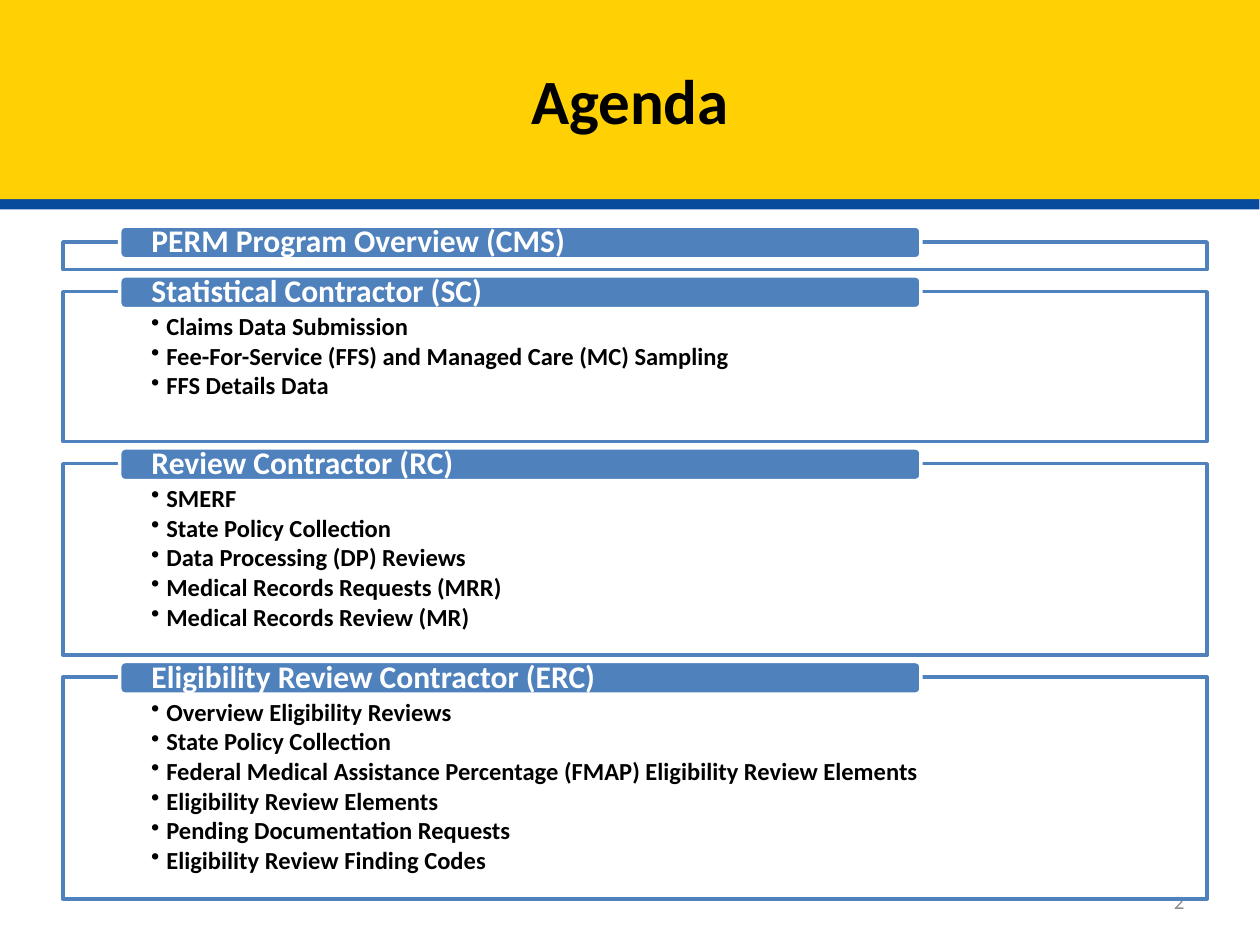
from dataclasses import dataclass

from lxml import etree
from pptx import Presentation
from pptx.dml.color import RGBColor
from pptx.enum.shapes import MSO_SHAPE
from pptx.enum.text import MSO_ANCHOR, PP_ALIGN
from pptx.oxml import parse_xml
from pptx.oxml.ns import nsdecls, qn
from pptx.util import Inches, Pt

RECTANGLE = MSO_SHAPE.RECTANGLE
ROUNDED = MSO_SHAPE.ROUNDED_RECTANGLE
TOP, MIDDLE = MSO_ANCHOR.TOP, MSO_ANCHOR.MIDDLE
LEFT, CENTER, RIGHT = PP_ALIGN.LEFT, PP_ALIGN.CENTER, PP_ALIGN.RIGHT

COLORS = {
    "banner": "FFD004",
    "edge": "084A9C",
    "section": "4F81BD",
    "paper": "FFFFFF",
    "ink": "000000",
    "page": "8C8C8C",
}
FONT = "Calibri"
CELL = Inches(0.1)
COLUMNS, ROWS = 100, 75
FIRST_PANEL_ROW = 19.2
PANEL_GAP = 1.75
PANEL_COLUMN, PANEL_COLUMNS = 5, 90.8
HEADING_COLUMN, HEADING_COLUMNS = 9.5, 63.6
HEADING_ROWS, HEADING_RISE = 2.6, 1.25


@dataclass(frozen=True)
class Section:
    heading: str
    rows: float
    topics: tuple[str, ...] = ()


SECTIONS = (
    Section("PERM Program Overview (CMS)", 2.2),
    Section("Statistical Contractor (SC)", 11.9, (
        "Claims Data Submission",
        "Fee-For-Service (FFS) and Managed Care (MC) Sampling",
        "FFS Details Data",
    )),
    Section("Review Contractor (RC)", 15.2, (
        "SMERF",
        "State Policy Collection",
        "Data Processing (DP) Reviews",
        "Medical Records Requests (MRR)",
        "Medical Records Review (MR)",
    )),
    Section("Eligibility Review Contractor (ERC)", 17.6, (
        "Overview Eligibility Reviews",
        "State Policy Collection",
        "Federal Medical Assistance Percentage (FMAP) Eligibility Review Elements",
        "Eligibility Review Elements",
        "Pending Documentation Requests",
        "Eligibility Review Finding Codes",
    )),
)


def grid(column: float, row: float, columns: float, rows: float) -> list[int]:
    """Turn grid positions into slide lengths."""
    return [round(cells * CELL) for cells in (column, row, columns, rows)]


def color(name: str) -> RGBColor:
    """Look up a named colour."""
    return RGBColor.from_string(COLORS[name])


def add_bullet(paragraph) -> None:
    """Give a paragraph a hanging bullet."""
    properties = paragraph._p.get_or_add_pPr()
    properties.set("marL", str(Inches(0.12)))
    properties.set("indent", str(-Inches(0.12)))
    etree.SubElement(properties, qn("a:buChar")).set("char", "•")


def write(shape, *lines: str, size: float, ink: str, bold: bool = True,
          align=LEFT, anchor=MIDDLE, margins=(0.1, 0.05, 0.1, 0.05),
          spacing: float = 1.0, after: float = 0, bullets: bool = False) -> None:
    """Write formatted paragraphs into a shape."""
    frame = shape.text_frame
    frame.word_wrap = True
    frame.vertical_anchor = anchor
    (frame.margin_left, frame.margin_top,
     frame.margin_right, frame.margin_bottom) = map(Inches, margins)
    for index, line in enumerate(lines):
        paragraph = frame.add_paragraph() if index else frame.paragraphs[0]
        paragraph.alignment = align
        paragraph.line_spacing = spacing
        paragraph.space_before = Pt(0)
        paragraph.space_after = Pt(after)
        if bullets:
            add_bullet(paragraph)
        run = paragraph.add_run()
        run.text = line
        run.font.name = FONT
        run.font.size = Pt(size)
        run.font.bold = bold
        run.font.color.rgb = color(ink)


def add_block(slide, kind, place: list[int], fill: str, line: str):
    """Add a filled and outlined shape without a shadow."""
    block = slide.shapes.add_shape(kind, *place)
    block.shadow.inherit = False
    block.fill.solid()
    block.fill.fore_color.rgb = color(fill)
    block.line.color.rgb = color(line)
    block.line.width = Pt(2)
    return block


def add_banner(slide) -> None:
    """Format the title as a banner with a hard blue shadow."""
    banner = slide.shapes.title
    banner.left, banner.top, banner.width, banner.height = grid(0, 0, COLUMNS, 15.8)
    banner.fill.solid()
    banner.fill.fore_color.rgb = color("banner")
    banner._element.spPr.append(parse_xml(
        f'<a:effectLst {nsdecls("a")}>'
        f'<a:outerShdw dist="{Pt(6)}" dir="5640000" algn="tl" rotWithShape="0">'
        f'<a:srgbClr val="{COLORS["edge"]}"/></a:outerShdw></a:effectLst>'))
    write(banner, "Agenda", size=36, ink="ink", align=CENTER)


def add_section(slide, section: Section, row: float) -> None:
    """Draw a section's panel, topics and heading."""
    panel = add_block(slide, RECTANGLE,
                      grid(PANEL_COLUMN, row, PANEL_COLUMNS, section.rows),
                      "paper", "section")
    paper = panel._element.spPr.find(qn("a:solidFill"))[0]
    etree.SubElement(paper, qn("a:alpha")).set("val", "90000")
    write(panel, *section.topics, size=14, ink="ink", anchor=TOP,
          margins=(0.7, 0.18, 0.7, 0.11), spacing=0.9, after=1.8, bullets=True)
    heading = add_block(slide, ROUNDED,
                        grid(HEADING_COLUMN, row - HEADING_RISE,
                             HEADING_COLUMNS, HEADING_ROWS),
                        "section", "paper")
    write(heading, section.heading, size=18, ink="paper",
          margins=(0.24, 0, 0.24, 0), spacing=0.9)


def main() -> None:
    """Build the agenda slide."""
    deck = Presentation()
    deck.slide_width, deck.slide_height = COLUMNS * CELL, ROWS * CELL
    slide = deck.slides.add_slide(deck.slide_layouts[5])
    add_banner(slide)
    page = slide.shapes.add_textbox(*grid(71.7, 69.5, 23.3, 4))
    write(page, "2", size=12, ink="page", bold=False, align=RIGHT, after=6)
    row = FIRST_PANEL_ROW
    for section in SECTIONS:
        add_section(slide, section, row)
        row += section.rows + PANEL_GAP
    deck.save("out.pptx")


if __name__ == "__main__":
    main()
